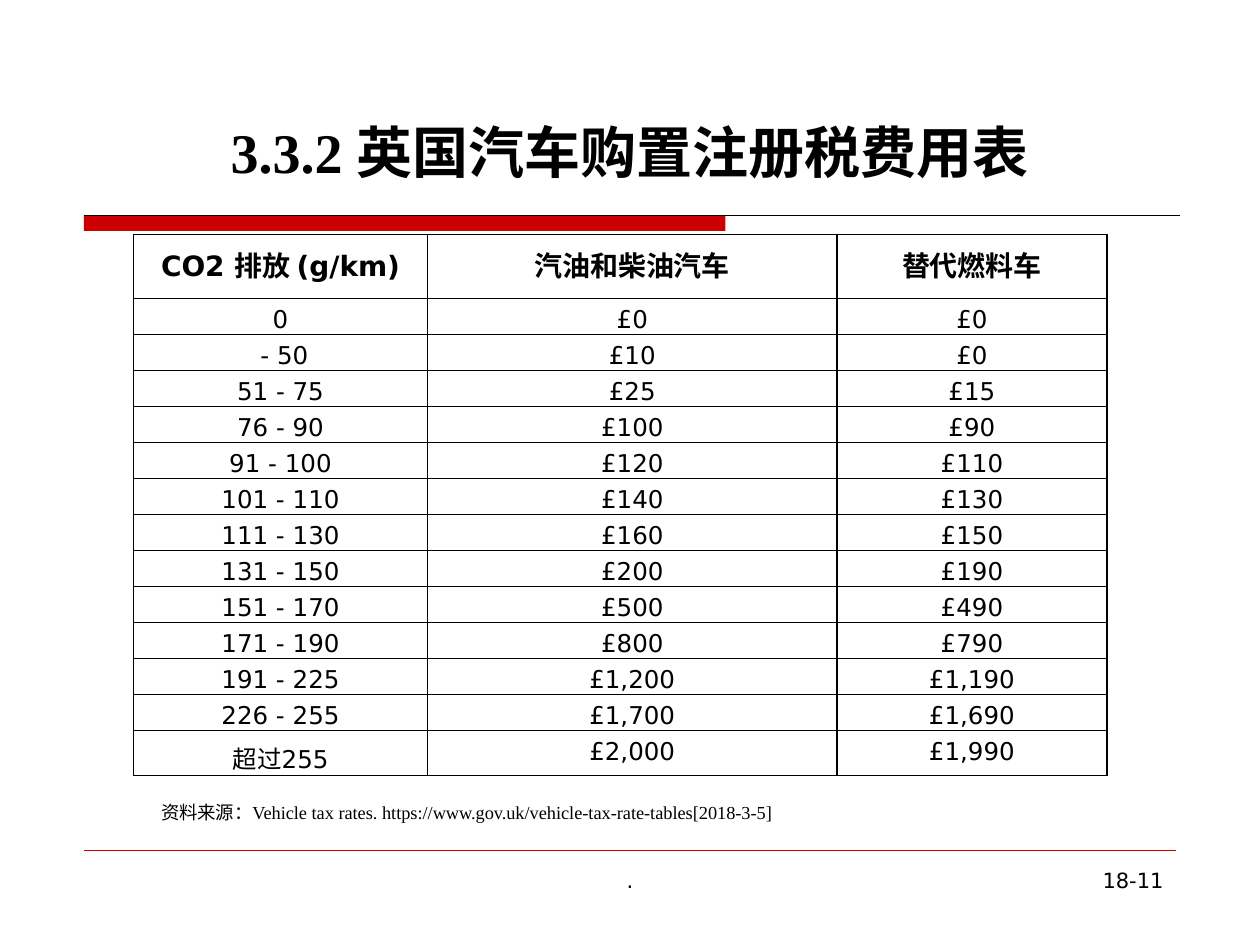
from typing import NamedTuple

from lxml.etree import SubElement
from pptx import Presentation
from pptx.dml.color import RGBColor
from pptx.enum.shapes import MSO_CONNECTOR, MSO_SHAPE
from pptx.enum.text import MSO_ANCHOR, MSO_AUTO_SIZE, PP_ALIGN
from pptx.oxml.ns import qn
from pptx.util import Inches, Pt

RED = RGBColor(0xCC, 0x00, 0x00)
BLACK = RGBColor(0x00, 0x00, 0x00)
SANS = "DejaVu Sans"
SERIF = "Times New Roman"
UNIT = Inches(10) / 120  # the slide is a grid of 120 columns and 90 rows


class Box(NamedTuple):
    left: float
    top: float
    width: float
    height: float


class Rule(NamedTuple):
    left: float
    right: float
    row: float
    color: RGBColor
    weight: float


class Note(NamedTuple):
    text: str
    box: Box
    style: dict


class Rate(NamedTuple):
    band: str
    fuel: int
    other: int


TITLE = Box(20.76, 7.2, 99.24, 11.04)
BAR = Box(8, 20.5, 61.1, 1.5)
RULES = [
    Rule(8, 112.4, 20.5, BLACK, 0.75),
    Rule(8, 112, 81, RED, 0.25),
]
NOTES = [
    Note(".", Box(41, 82, 38, 6.25), dict(size=12, align=PP_ALIGN.CENTER)),
    Note("18-11", Box(86, 82, 26, 6.25), dict(size=12, align=PP_ALIGN.RIGHT)),
    Note(
        "资料来源：Vehicle tax rates. https://www.gov.uk/vehicle-tax-rate-tables[2018-3-5]",
        Box(12.72, 75.7, 76, 3.4),
        dict(size=10.5, font=SERIF, indent=1.44, anchor=MSO_ANCHOR.MIDDLE),
    ),
]

HEAD = ("CO2 排放 (g/km)", "汽油和柴油汽车", "替代燃料车")
RATES = [
    Rate("0", 0, 0),
    Rate(" - 50", 10, 0),
    Rate("51 - 75", 25, 15),
    Rate("76 - 90", 100, 90),
    Rate("91 - 100", 120, 110),
    Rate("101 - 110", 140, 130),
    Rate("111 - 130", 160, 150),
    Rate("131 - 150", 200, 190),
    Rate("151 - 170", 500, 490),
    Rate("171 - 190", 800, 790),
    Rate("191 - 225", 1200, 1190),
    Rate("226 - 255", 1700, 1690),
    Rate("超过255", 2000, 1990),
]
COLS = (28, 39, 25.7)
HEAD_ROW, ROW = 6.12, 2.88
GRID = Box(12.72, 22.32, sum(COLS), HEAD_ROW + ROW * len(RATES))


def grid(count: float) -> int:
    """Turn grid units into EMU."""
    return round(count * UNIT)


def span(box: Box) -> list[int]:
    return [grid(side) for side in box]


def write(frame, text: str, *, size: float, font: str = SANS, bold: bool = False,
          align=PP_ALIGN.LEFT, anchor=MSO_ANCHOR.TOP, lead: float = 1,
          indent: float = 0) -> None:
    frame.word_wrap = True
    frame.vertical_anchor = anchor
    para = frame.paragraphs[0]
    para.alignment = align
    para.line_spacing = lead
    para.space_before = Pt(0)
    if indent:
        para._p.get_or_add_pPr().set("indent", str(grid(indent)))
    run = para.add_run()
    run.text = text
    run.font.size = Pt(size)
    run.font.name = font
    run.font.bold = bold
    run.font.color.rgb = BLACK


def draw_rule(slide, rule: Rule) -> None:
    row = grid(rule.row)
    line = slide.shapes.add_connector(
        MSO_CONNECTOR.STRAIGHT, grid(rule.left), row, grid(rule.right), row)
    line.line.color.rgb = rule.color
    line.line.width = Pt(rule.weight)
    SubElement(line._element.spPr, qn("a:effectLst"))


def draw_bar(slide, box: Box) -> None:
    bar = slide.shapes.add_shape(MSO_SHAPE.RECTANGLE, *span(box))
    bar.shadow.inherit = False
    bar.fill.solid()
    bar.fill.fore_color.rgb = RED
    bar.line.fill.background()


def draw_note(slide, note: Note) -> None:
    shape = slide.shapes.add_textbox(*span(note.box))
    write(shape.text_frame, note.text, **note.style)


def frame_cell(cell) -> None:
    """Give a cell black borders and no fill."""
    props = cell._tc.get_or_add_tcPr()
    for side in ("lnL", "lnR", "lnT", "lnB"):
        edge = SubElement(props, qn(f"a:{side}"), w=str(Pt(1)))
        paint = SubElement(edge, qn("a:solidFill"))
        SubElement(paint, qn("a:srgbClr"), val=str(BLACK))
    cell.fill.background()


def draw_table(slide) -> None:
    rows = [HEAD] + [(r.band, f"£{r.fuel:,}", f"£{r.other:,}") for r in RATES]
    table = slide.shapes.add_table(len(rows), len(COLS), *span(GRID)).table
    table.horz_banding = False
    for col, width in zip(table.columns, COLS):
        col.width = grid(width)
    for index, texts in enumerate(rows):
        head = index == 0
        table.rows[index].height = grid(HEAD_ROW if head else ROW)
        for cell, text in zip(table.rows[index].cells, texts):
            cell.margin_left = cell.margin_right = Inches(0.07)
            cell.margin_top = cell.margin_bottom = 0
            write(cell.text_frame, text, size=16 if head else 14, bold=head,
                  align=PP_ALIGN.CENTER, lead=1.25)
            frame_cell(cell)


def main() -> None:
    deck = Presentation()
    deck.slide_width, deck.slide_height = grid(120), grid(90)
    slide = deck.slides.add_slide(deck.slide_layouts[5])
    title = slide.shapes.title
    title.left, title.top, title.width, title.height = span(TITLE)
    title.text_frame.auto_size = MSO_AUTO_SIZE.NONE
    write(title.text_frame, "3.3.2 英国汽车购置注册税费用表", size=32, font=SERIF,
          bold=True, anchor=MSO_ANCHOR.BOTTOM)
    draw_bar(slide, BAR)
    for rule in RULES:
        draw_rule(slide, rule)
    draw_table(slide)
    for note in NOTES:
        draw_note(slide, note)
    deck.save("out.pptx")


if __name__ == "__main__":
    main()
